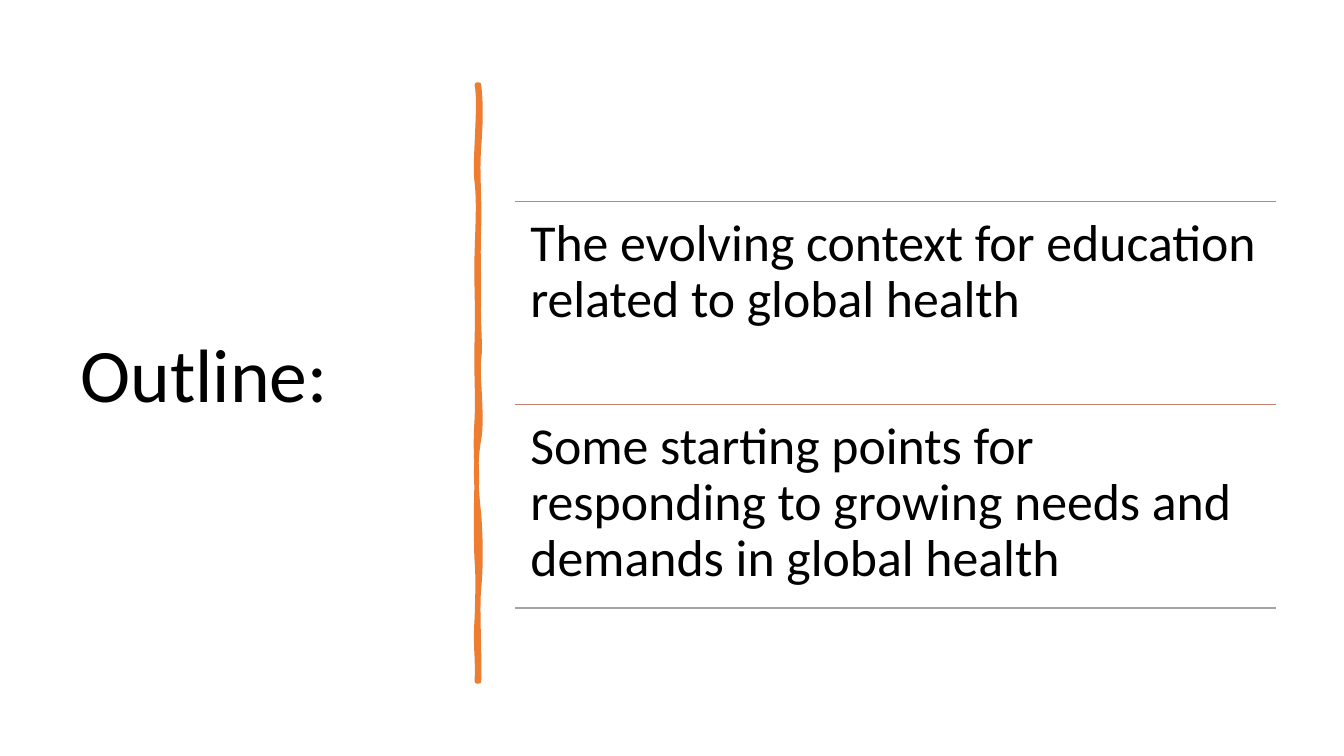
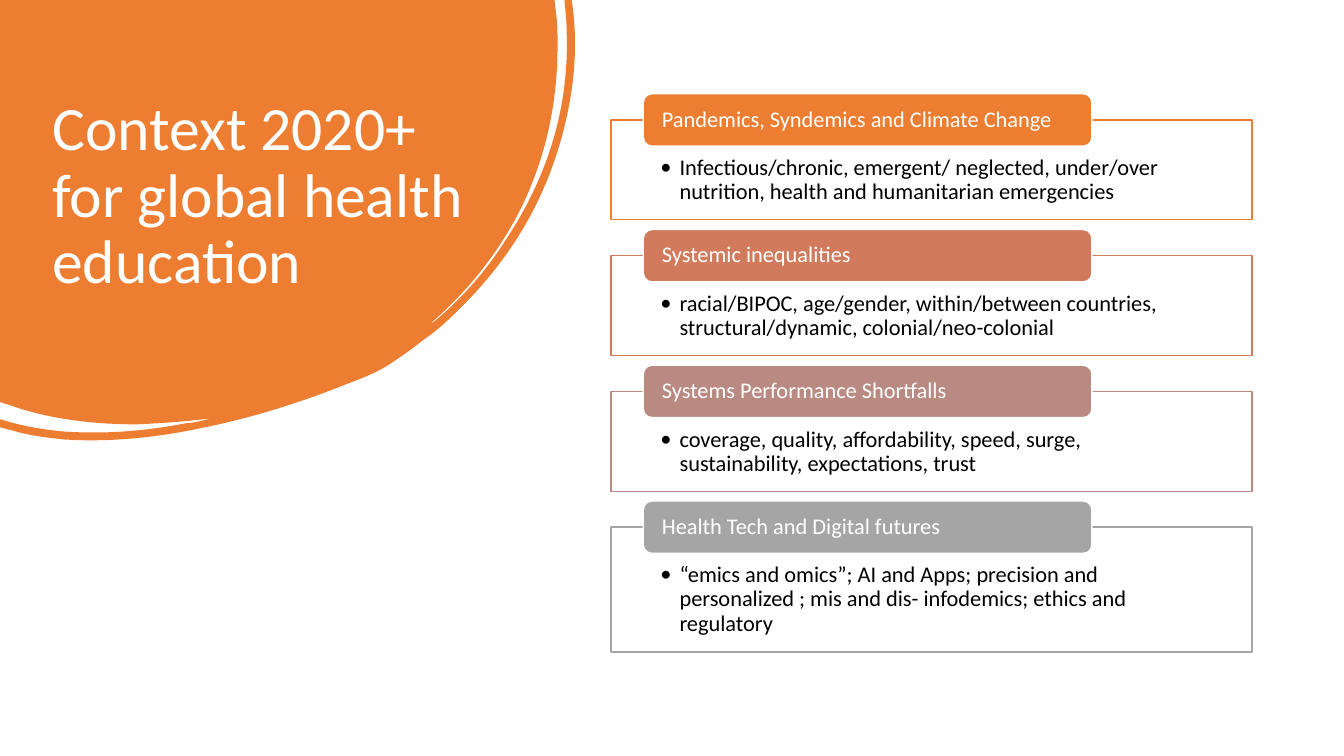
from dataclasses import dataclass
from typing import Any

from lxml.etree import SubElement
from pptx import Presentation
from pptx.dml.color import RGBColor
from pptx.enum.shapes import MSO_CONNECTOR, MSO_SHAPE
from pptx.enum.text import MSO_ANCHOR, PP_ALIGN
from pptx.oxml.ns import qn
from pptx.util import Inches, Pt


@dataclass(frozen=True)
class Theme:
    font: str = "Calibri"
    orange: str = "ED7D31"
    rose: str = "C48170"
    terracotta: str = "D17B5C"
    mauve: str = "B98A82"
    gray: str = "A5A5A5"
    black: str = "000000"
    white: str = "FFFFFF"
    outline_title: int = 54
    outline_item: int = 37
    context_title: int = 44
    context_body: int = 16
    rule: float = 1
    brush: float = 3.25
    line_spacing: float = 0.9


@dataclass(frozen=True)
class Box:
    left: float
    top: float
    width: float
    height: float

    def emu(self) -> list[int]:
        return [Inches(v) for v in (self.left, self.top, self.width, self.height)]


@dataclass(frozen=True)
class TextStyle:
    size: float
    color: str
    insets: tuple[float, float, float, float] = (0.1, 0.05, 0.1, 0.05)
    anchor: MSO_ANCHOR = MSO_ANCHOR.TOP
    bullet: bool = False


@dataclass(frozen=True)
class Topic:
    heading: str
    body: str
    color: str
    height: float = 0.99


Contour = list[tuple[float, ...]]

T = Theme()
OUTLINE_TITLE = TextStyle(T.outline_title, T.black, anchor=MSO_ANCHOR.MIDDLE)
OUTLINE_ITEM = TextStyle(T.outline_item, T.black, (0.15,) * 4)
CONTEXT_TITLE = TextStyle(T.context_title, T.white)
TOPIC_HEADING = TextStyle(T.context_body, T.white, (0.16, 0, 0.16, 0), MSO_ANCHOR.MIDDLE)
TOPIC_BODY = TextStyle(T.context_body, T.black, (0.49, 0.36, 0.49, 0.12), bullet=True)

OUTLINE_ITEMS = [
    "The evolving context for education related to global health",
    "Some starting points for responding to growing needs and demands in global health",
]
RULE_COLORS = [T.orange, T.rose, T.gray]

TOPICS = [
    Topic("Pandemics, Syndemics and Climate Change",
          "Infectious/chronic, emergent/ neglected, under/over nutrition, "
          "health and humanitarian emergencies", T.orange),
    Topic("Systemic inequalities",
          "racial/BIPOC, age/gender, within/between countries, "
          "structural/dynamic, colonial/neo-colonial", T.terracotta),
    Topic("Systems Performance Shortfalls",
          "coverage, quality, affordability, speed, surge, "
          "sustainability, expectations, trust", T.mauve),
    Topic("Health Tech and Digital futures",
          "“emics and omics”; AI and Apps; precision and personalized ; "
          "mis and dis- infodemics; ethics and regulatory", T.gray, 1.24),
]

BRUSH: Contour = [
    (4.75, 0.84),
    (4.77, 1.02, 4.77, 1.19, 4.75, 1.46),
    (4.73, 1.73, 4.76, 1.95, 4.75, 2.26),
    (4.74, 2.57, 4.75, 2.62, 4.75, 2.94),
    (4.74, 3.25, 4.77, 3.42, 4.75, 3.56),
    (4.73, 3.7, 4.79, 4.14, 4.75, 4.36),
    (4.71, 4.57, 4.72, 4.84, 4.75, 5.1),
    (4.77, 5.36, 4.77, 5.64, 4.75, 5.84),
    (4.73, 6.03, 4.76, 6.5, 4.75, 6.76),
    (4.73, 6.76),
    (4.74, 6.46, 4.71, 6.44, 4.73, 6.13),
    (4.74, 5.83, 4.74, 5.7, 4.73, 5.57),
    (4.72, 5.44, 4.72, 4.95, 4.73, 4.77),
    (4.73, 4.59, 4.71, 4.45, 4.73, 4.15),
    (4.74, 3.86, 4.72, 3.73, 4.73, 3.35),
    (4.74, 2.98, 4.72, 2.81, 4.73, 2.5),
    (4.74, 2.18, 4.75, 2, 4.73, 1.81),
    (4.7, 1.63, 4.77, 1.04, 4.73, 0.84),
]

SPLASH: Contour = [
    (0, 0),
    (5.5, 0),
    (5.52, 0.17),
    (5.53, 0.26, 5.53, 0.36, 5.53, 0.45),
    (5.53, 1.01, 5.42, 1.54, 5.18, 2.04),
    (4.96, 2.49, 4.65, 2.88, 4.27, 3.21),
    (4.29, 3.21, 4.3, 3.19, 4.32, 3.18),
    (4.59, 2.95, 4.82, 2.69, 5.01, 2.39),
    (5.43, 1.76, 5.65, 1.07, 5.62, 0.3),
    (5.62, 0.21, 5.61, 0.12, 5.6, 0.03),
    (5.6, 0),
    (5.67, 0),
    (5.68, 0.07),
    (5.74, 0.54, 5.68, 1.02, 5.53, 1.5),
    (5.33, 2.14, 4.97, 2.68, 4.48, 3.14),
    (4.39, 3.23, 4.29, 3.31, 4.19, 3.38),
    (4.09, 3.46, 3.99, 3.53, 3.87, 3.61),
    (3.75, 3.69, 3.6, 3.75, 3.44, 3.81),
    (2.99, 3.99, 2.52, 4.14, 2.03, 4.24),
    (1.57, 4.34, 1.1, 4.39, 0.63, 4.36),
    (0.45, 4.34, 0.28, 4.32, 0.12, 4.27),
    (0, 4.24),
    (0, 4.16),
    (0.04, 4.17),
    (0.23, 4.23, 0.42, 4.26, 0.61, 4.28),
    (1.03, 4.31, 1.43, 4.28, 1.84, 4.2),
    (1.89, 4.2, 1.93, 4.19, 1.98, 4.18),
    (2.02, 4.17, 2.06, 4.16, 2.1, 4.15),
    (1.86, 4.18, 1.61, 4.2, 1.36, 4.21),
    (0.92, 4.21, 0.48, 4.16, 0.07, 4.01),
    (0, 3.99),
]


def apply(obj: Any, values: dict[str, Any]) -> None:
    for name, value in values.items():
        setattr(obj, name, value)


def rgb(color: str) -> RGBColor:
    return RGBColor.from_string(color)


def write(sp: Any, text: str, style: TextStyle) -> None:
    tf = sp.text_frame
    left, top, right, bottom = (Inches(v) for v in style.insets)
    apply(tf, {"word_wrap": True, "vertical_anchor": style.anchor,
               "margin_left": left, "margin_top": top,
               "margin_right": right, "margin_bottom": bottom})
    p = tf.paragraphs[0]
    if style.bullet:
        pPr = p._p.get_or_add_pPr()
        pPr.set("marL", str(Inches(0.19)))
        pPr.set("indent", str(-Inches(0.19)))
        SubElement(pPr, qn("a:buFont")).set("typeface", T.font)
        SubElement(pPr, qn("a:buChar")).set("char", "•")
    apply(p, {"alignment": PP_ALIGN.LEFT, "line_spacing": T.line_spacing})
    r = p.add_run()
    r.text = text
    apply(r.font, {"name": T.font, "size": Pt(style.size)})
    r.font.color.rgb = rgb(style.color)


def add_text(s: Any, box: Box, text: str, style: TextStyle) -> None:
    write(s.shapes.add_textbox(*box.emu()), text, style)


def paint(sp: Any, fill: str, line: str | None = None, width: float = T.rule) -> None:
    sp.shadow.inherit = False
    sp.fill.solid()
    sp.fill.fore_color.rgb = rgb(fill)
    if line is None:
        sp.line.fill.background()
    else:
        sp.line.color.rgb = rgb(line)
        sp.line.width = Pt(width)


def add_panel(s: Any, kind: MSO_SHAPE, box: Box, fill: str, line: str,
              text: str, style: TextStyle) -> None:
    sp = s.shapes.add_shape(kind, *box.emu())
    paint(sp, fill, line)
    write(sp, text, style)


def add_rule(s: Any, left: float, right: float, y: float, color: str) -> None:
    sp = s.shapes.add_connector(MSO_CONNECTOR.STRAIGHT, Inches(left), Inches(y),
                                Inches(right), Inches(y))
    sp.line.color.rgb = rgb(color)
    sp.line.width = Pt(T.rule)
    SubElement(sp._element.spPr, qn("a:effectLst"))


def add_outline(s: Any, contour: Contour) -> Any:
    ends = [(Inches(seg[-2]), Inches(seg[-1])) for seg in contour]
    builder = s.shapes.build_freeform(*ends[0])
    builder.add_line_segments(ends[1:], close=True)
    sp = builder.convert_to_shape()
    lines = list(sp._element.iter(qn("a:lnTo")))
    for line, seg in zip(lines, contour[1:]):
        if len(seg) == 6:
            line.tag = qn("a:cubicBezTo")
            for i, (x, y) in enumerate((seg[:2], seg[2:4])):
                pt = line.makeelement(qn("a:pt"), {"x": str(Inches(x) - sp.left),
                                                   "y": str(Inches(y) - sp.top)})
                line.insert(i, pt)
    return sp


def build_outline(s: Any) -> None:
    add_text(s, Box(0.7, 0.69, 3.74, 6.11), "Outline:", OUTLINE_TITLE)
    paint(add_outline(s, BRUSH), T.orange, T.orange, T.brush)
    left, top, width, bottom = 5.11, 2, 7.55, 6.03
    step = (bottom - top) / len(OUTLINE_ITEMS)
    for i, color in enumerate(RULE_COLORS):
        add_rule(s, left, left + width, top + i * step, color)
    for i, item in enumerate(OUTLINE_ITEMS):
        add_text(s, Box(left, top + i * step, width, step), item, OUTLINE_ITEM)


def build_context(s: Any) -> None:
    paint(add_outline(s, SPLASH), T.orange)
    add_text(s, Box(0.42, 0.92, 4.59, 2.12),
             "Context 2020+ for global health education", CONTEXT_TITLE)
    first, last = 1.19, 5.23
    step = (last - first) / (len(TOPICS) - 1)
    for i, topic in enumerate(TOPICS):
        top = first + i * step
        add_panel(s, MSO_SHAPE.RECTANGLE, Box(6.06, top, 6.36, topic.height),
                  T.white, topic.color, topic.body, TOPIC_BODY)
        add_panel(s, MSO_SHAPE.ROUNDED_RECTANGLE, Box(6.38, top - 0.26, 4.45, 0.52),
                  topic.color, T.white, topic.heading, TOPIC_HEADING)


def main() -> None:
    prs = Presentation()
    apply(prs, {"slide_width": Inches(13.33), "slide_height": Inches(7.5)})
    for build in (build_outline, build_context):
        build(prs.slides.add_slide(prs.slide_layouts[6]))
    prs.save("out.pptx")


if __name__ == "__main__":
    main()
